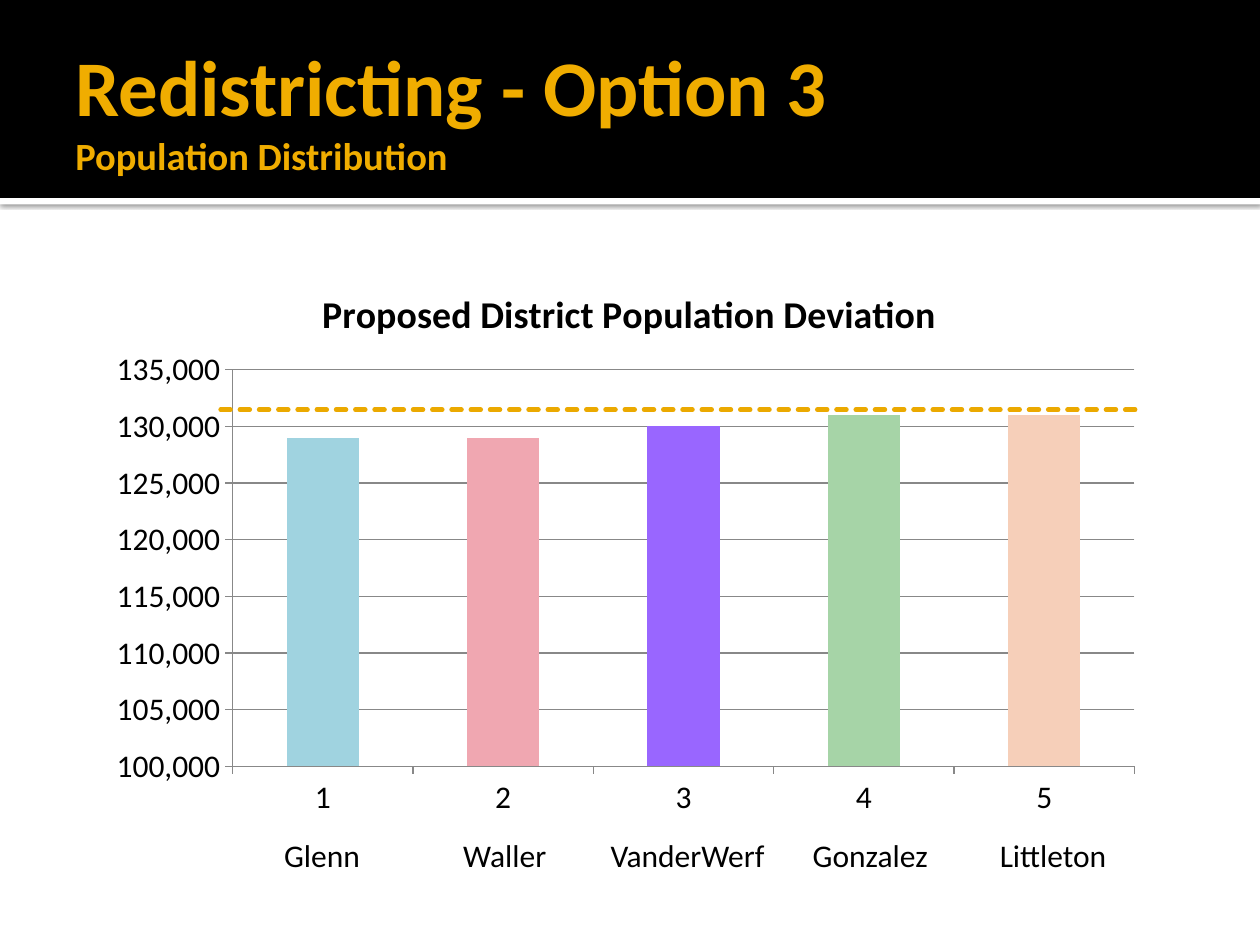
"""Build the redistricting slide with its population chart and name row."""
from lxml import etree
from pptx import Presentation
from pptx import util as u
from pptx.chart.data import CategoryChartData
from pptx.dml.color import RGBColor
from pptx.enum import chart as ch, dml, shapes, text
from pptx.oxml import parse_xml
from pptx.oxml.ns import nsdecls, qn

BLACK = RGBColor(0, 0, 0)
WHITE = RGBColor(255, 255, 255)
GOLD = RGBColor(0xF0, 0xAD, 0x00)
AMBER = RGBColor(0xEB, 0xA9, 0x00)
GRAY = RGBColor(0x88, 0x88, 0x88)
FONT = "Calibri"

HEAD = [("Redistricting - Option 3", 45), ("Population Distribution", 22)]
TITLE = " Proposed District Population Deviation"
BARS = [
    ("1", "Glenn", 129000, RGBColor(0xA0, 0xD3, 0xE0)),
    ("2", "Waller", 129000, RGBColor(0xF0, 0xA7, 0xB1)),
    ("3", "VanderWerf", 130000, RGBColor(0x99, 0x66, 0xFF)),
    ("4", "Gonzalez", 131000, RGBColor(0xA6, 0xD4, 0xA7)),
    ("5", "Littleton", 131000, RGBColor(0xF6, 0xCF, 0xB9)),
]
PLOT = {"x": 0.13, "y": 0.19, "w": 0.85, "h": 0.7}
EDGES = {"L": 1, "R": 1, "T": 1, "B": 3}


def style(font, size=18, color=BLACK, bold=False):
    font.name, font.size, font.bold = FONT, u.Pt(size), bold
    font.color.rgb = color


def write(para, words, align=text.PP_ALIGN.LEFT, **form):
    para.alignment = align
    run = para.add_run()
    run.text = words
    style(run.font, **form)


def add_band(slide, top, height, color, shade=False):
    band = slide.shapes.add_shape(
        shapes.MSO_SHAPE.RECTANGLE, 0, u.Cm(top), u.Cm(25.4), u.Cm(height))
    band.shadow.inherit = False
    band.fill.solid()
    band.fill.fore_color.rgb = color
    band.line.fill.background()
    if shade:
        glow = band._element.spPr.find(qn("a:effectLst"))
        glow.append(parse_xml(
            f'<a:outerShdw {nsdecls("a")} blurRad="{u.Pt(2.5)}" dist="{u.Pt(0.8)}" '
            'dir="5400000" rotWithShape="0"><a:srgbClr val="000000">'
            '<a:alpha val="60000"/></a:srgbClr></a:outerShdw>'))
    slide.shapes._spTree.insert(2, band._element)


def add_head(slide):
    title = slide.shapes.title
    title.left, title.top = u.Cm(1.27), u.Cm(0.43)
    title.width, title.height = u.Cm(22.86), u.Cm(3.48)
    frame = title.text_frame
    frame.vertical_anchor = text.MSO_ANCHOR.MIDDLE
    frame.margin_left = u.Cm(0.25)
    frame.margin_top = frame.margin_right = frame.margin_bottom = u.Cm(0.13)
    para = frame.paragraphs[0]
    for row, (words, size) in enumerate(HEAD):
        if row:
            para.add_line_break()
        write(para, words, size=size, color=GOLD, bold=True)


def add_bars(slide):
    data = CategoryChartData(number_format="#,##0")
    data.categories = [bar[0] for bar in BARS]
    data.add_series("Series 1", [bar[2] for bar in BARS])
    chart = slide.shapes.add_chart(
        ch.XL_CHART_TYPE.COLUMN_CLUSTERED, u.Cm(1.91), u.Cm(5.28),
        u.Cm(21.39), u.Cm(11.43), data).chart
    style(chart.font)
    chart.has_legend = False
    chart.has_title = True
    write(chart.chart_title.text_frame.paragraphs[0], TITLE,
          align=text.PP_ALIGN.CENTER, size=21.6, bold=True)
    chart.chart_title.include_in_layout = False
    plot = chart.plots[0]
    plot.gap_width, plot.vary_by_categories = 150, False
    series = plot.series[0]
    series.format.fill.solid()
    series.format.fill.fore_color.rgb = GOLD
    for spot, bar in enumerate(BARS):
        fill = series.points[spot].format.fill
        fill.solid()
        fill.fore_color.rgb = bar[3]
    axis = chart.value_axis
    axis.minimum_scale, axis.maximum_scale, axis.major_unit = 100000, 135000, 5000
    axis.has_major_gridlines = True
    axis.tick_labels.number_format = "#,##0"
    axis.tick_labels.number_format_is_linked = False
    for side in (axis, chart.category_axis):
        side.major_tick_mark = ch.XL_TICK_MARK.OUTSIDE
        side.format.line.color.rgb = GRAY
        style(side.tick_labels.font)
    axis.major_gridlines.format.line.color.rgb = GRAY
    area = chart._chartSpace.chart.plotArea
    for old in area.findall(qn("c:layout")):
        area.remove(old)
    parts = '<c:layoutTarget val="inner"/><c:xMode val="edge"/><c:yMode val="edge"/>'
    parts += "".join(f'<c:{key} val="{val}"/>' for key, val in PLOT.items())
    area.insert(0, parse_xml(
        f'<c:layout {nsdecls("c")}><c:manualLayout>{parts}</c:manualLayout></c:layout>'))


def add_goal(slide):
    line = slide.shapes.add_connector(
        shapes.MSO_CONNECTOR.STRAIGHT, u.Cm(4.45), u.Cm(8.26), u.Cm(23.06), u.Cm(8.26))
    line.line.color.rgb = AMBER
    line.line.width = u.Pt(2.75)
    line.line.dash_style = dml.MSO_LINE.SQUARE_DOT
    line._element.spPr.find(qn("a:ln")).set("cap", "rnd")
    etree.SubElement(line._element.spPr, qn("a:effectLst"))


def add_names(slide):
    table = slide.shapes.add_table(
        1, len(BARS), u.Cm(4.65), u.Cm(16.75), u.Cm(18.42), u.Cm(1.04)).table
    table.first_row = table.horz_banding = False
    for cell, bar in zip(table.rows[0].cells, BARS):
        write(cell.text_frame.paragraphs[0], bar[1], align=text.PP_ALIGN.CENTER)
        cell.fill.background()
        props = cell._tc.get_or_add_tcPr()
        for spot, (edge, width) in enumerate(EDGES.items()):
            props.insert(spot, parse_xml(
                f'<a:ln{edge} {nsdecls("a")} w="{u.Pt(width)}"><a:solidFill>'
                f'<a:srgbClr val="{WHITE}"/></a:solidFill></a:ln{edge}>'))


def main():
    deck = Presentation()
    deck.slide_width, deck.slide_height = u.Cm(25.4), u.Cm(19.05)
    slide = deck.slides.add_slide(deck.slide_layouts[5])
    add_band(slide, 0, 3.99, BLACK)
    add_band(slide, 3.99, 0.13, WHITE, shade=True)
    add_head(slide)
    add_bars(slide)
    add_goal(slide)
    add_names(slide)
    deck.save("out.pptx")


if __name__ == "__main__":
    main()
